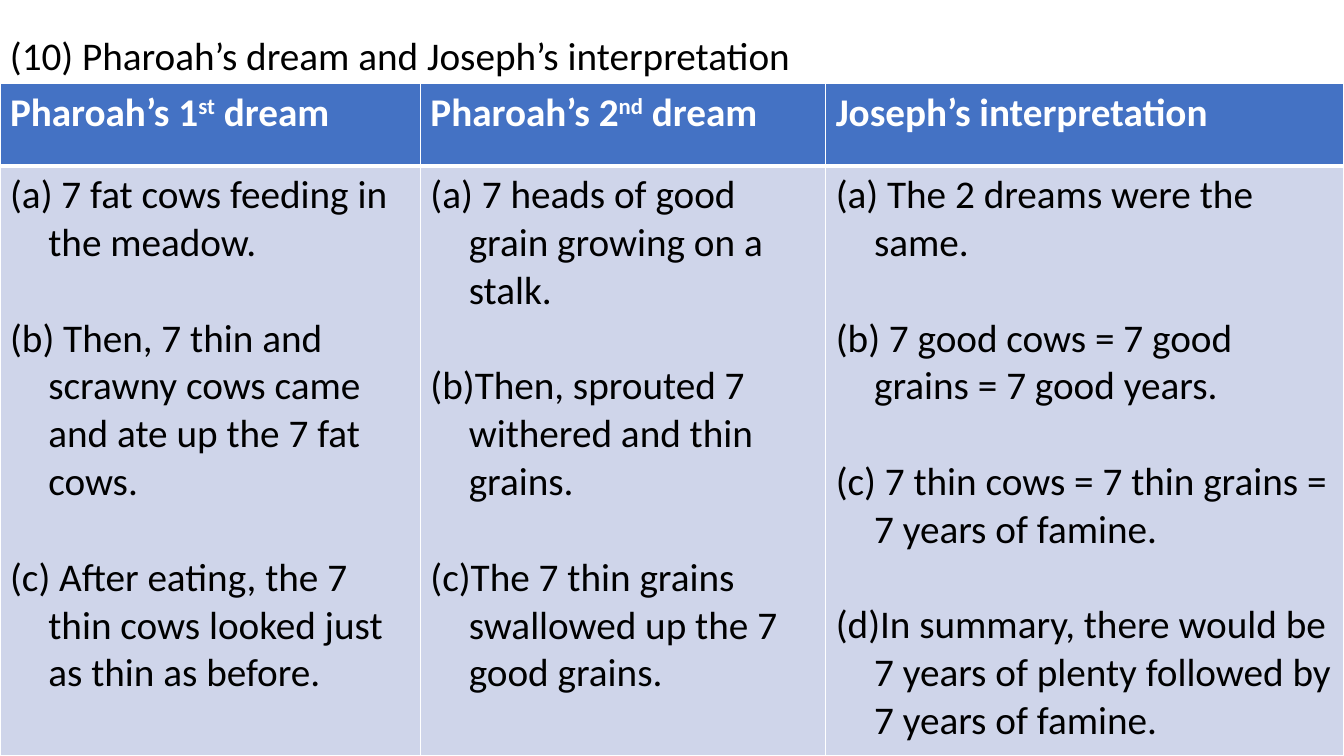
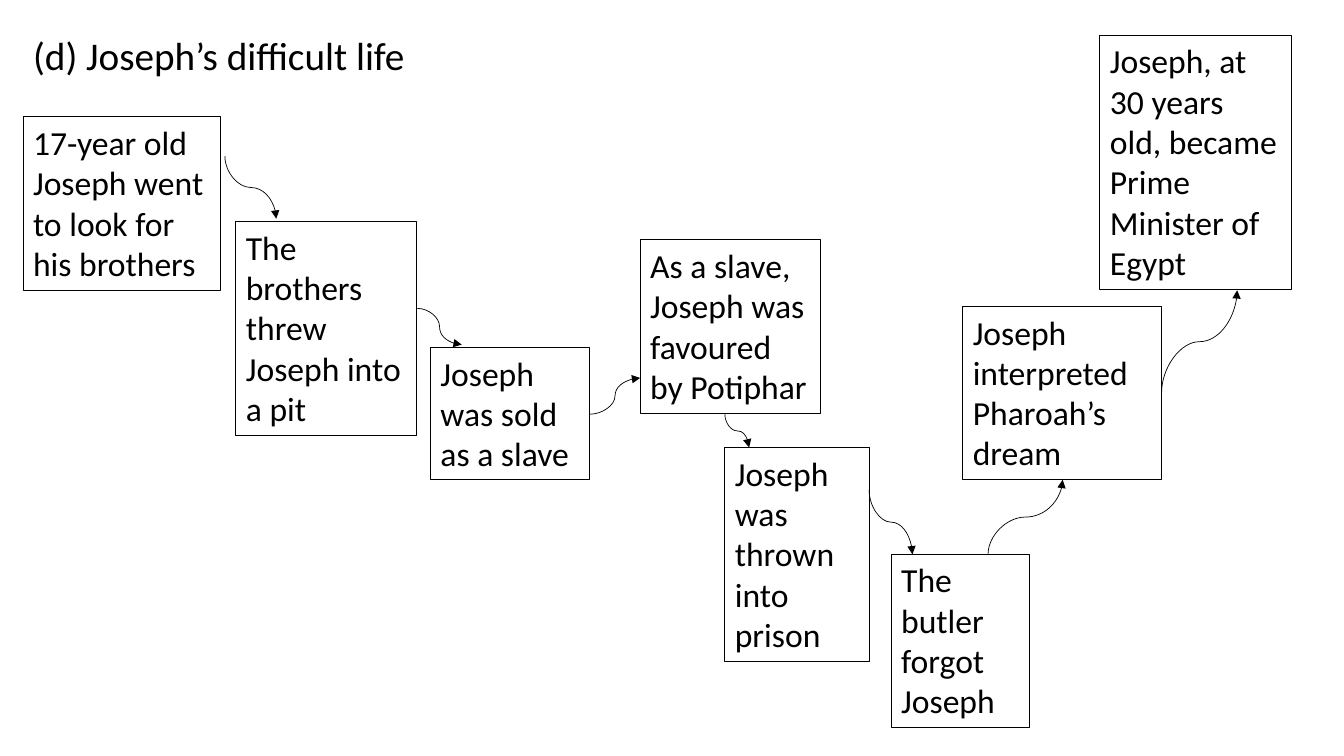
"""Build two slides on Joseph: a table of Pharoah's dreams and a life diagram."""
from lxml import etree
from pptx import Presentation
from pptx.dml.color import RGBColor
from pptx.enum.shapes import MSO_CONNECTOR, MSO_SHAPE
from pptx.enum.text import MSO_ANCHOR, MSO_AUTO_SIZE, PP_ALIGN
from pptx.oxml.ns import qn
from pptx.util import Inches, Pt

RECT, CURVE = MSO_SHAPE.RECTANGLE, MSO_CONNECTOR.CURVE
TOP, LEFT, GROW = MSO_ANCHOR.TOP, PP_ALIGN.LEFT, MSO_AUTO_SIZE.SHAPE_TO_FIT_TEXT

THEME = {
    "font": "Calibri", "ink": "000000", "paper": "FFFFFF",
    "header": "4472C4", "body": "CFD5EA",
    "title": 28, "cell": 28, "box": 24, "item_gap": 34,
    "outline": 0.75, "arrow": 0.5, "grid": 1, "header_rule": 3,
}

DREAM_TITLE = ("(10) Pharoah’s dream and Joseph’s interpretation", (0, 0.26, 13.33, 0.57))
TABLE_AT = (0, 0.83, 13.33, 6.67)
ROW_HEIGHTS = (0.82, 5.85)
COLUMNS = [
    (4.17, ("Pharoah’s 1", "st", " dream"), [
        " 7 fat cows feeding in the meadow.",
        " Then, 7 thin and scrawny cows came and ate up the 7 fat cows.",
        " After eating, the 7 thin cows looked just as thin as before."]),
    (4.02, ("Pharoah’s 2", "nd", " dream"), [
        " 7 heads of good grain growing on a stalk.",
        "Then, sprouted 7 withered and thin grains.",
        "The 7 thin grains swallowed up the 7 good grains."]),
    (5.14, ("Joseph’s interpretation",), [
        " The 2 dreams were the same.",
        " 7 good cows = 7 good grains = 7 good years.",
        " 7 thin cows = 7 thin grains = 7 years of famine.",
        "In summary, there would be 7 years of plenty followed by 7 years of famine."]),
]

LIFE_TITLE = ("(d) Joseph’s difficult life", (0.23, 0.26, 4.34, 0.57))
EVENTS = [
    ("17-year old Joseph went to look for his brothers", (0.23, 1.16, 1.96, 1.72)),
    ("The brothers threw Joseph into a pit", (2.34, 2.2, 1.79, 2.12)),
    ("Joseph was sold as a slave", (4.27, 3.45, 1.58, 1.31)),
    ("As a slave, Joseph was favoured by Potiphar", (6.35, 2.38, 1.79, 1.72)),
    ("Joseph was thrown into prison", (7.19, 4.44, 1.43, 2.12)),
    ("The butler forgot Joseph", (8.84, 5.5, 1.37, 1.72)),
    ("Joseph interpreted Pharoah’s dream", (9.55, 3.04, 1.97, 1.72)),
    ("Joseph, at 30 years old, became Prime Minister of Egypt", (10.91, 0.35, 1.9, 2.52)),
]
ARROWS = [
    ("vertical", (2.23, 1.55), (2.74, 2.17)),
    ("horizontal", (4.14, 3.06), (4.58, 3.42)),
    ("horizontal", (5.85, 4.11), (6.35, 3.75)),
    ("vertical", (7.19, 4.11), (7.43, 4.44)),
    ("vertical", (8.62, 4.86), (9.05, 5.5)),
    ("vertical", (9.8, 5.5), (10.54, 4.76)),
    ("vertical", (11.52, 3.9), (12.27, 2.88)),
]


def rgb(name):
    return RGBColor.from_string(THEME[name])


def inches(values):
    return [Inches(v) for v in values]


def add_run(p, text, size, color="ink", bold=False):
    r = p.add_run()
    r.text = text
    values = {"name": THEME["font"], "size": Pt(THEME[size]), "bold": bold}
    for key, value in values.items():
        setattr(r.font, key, value)
    r.font.color.rgb = rgb(color)
    return r


def fill_frame(sp, text, size):
    tf = sp.text_frame
    values = {"word_wrap": True, "auto_size": GROW, "vertical_anchor": TOP}
    for key, value in values.items():
        setattr(tf, key, value)
    p = tf.paragraphs[0]
    p.alignment = LEFT
    add_run(p, text, size)


def add_title(s, text, at):
    fill_frame(s.shapes.add_textbox(*inches(at)), text, "title")


def add_event(s, text, at):
    sp = s.shapes.add_shape(RECT, *inches(at))
    sp.shadow.inherit = False
    sp.fill.background()
    sp.line.color.rgb = rgb("ink")
    sp.line.width = Pt(THEME["outline"])
    fill_frame(sp, text, "box")


def add_arrow(s, direction, start, end):
    (x1, y1), (x2, y2) = start, end
    turn = 0
    if direction == "vertical":
        cx, cy, dx, dy = (x1 + x2) / 2, (y1 + y2) / 2, x2 - x1, y2 - y1
        side = 1 if dy > 0 else -1
        half_w, half_h = abs(dy) / 2, side * dx / 2
        x1, y1, x2, y2 = cx + half_w, cy - half_h, cx - half_w, cy + half_h
        turn = 270 if dy > 0 else 90
    c = s.shapes.add_connector(CURVE, *inches((x1, y1, x2, y2)))
    c.line.color.rgb = rgb("ink")
    c.line.width = Pt(THEME["arrow"])
    pr = c._element.spPr
    pr.find(qn("a:xfrm")).set("rot", str(turn * 60000))
    etree.SubElement(pr.find(qn("a:ln")), qn("a:tailEnd"), type="triangle")
    etree.SubElement(pr, qn("a:effectLst"))


def style_cell(cell, fill, top, bottom):
    pr = cell._tc.get_or_add_tcPr()
    for side, width in zip("LRTB", ("grid", "grid", top, bottom)):
        ln = etree.SubElement(pr, qn(f"a:ln{side}"), w=str(Pt(THEME[width])))
        solid = etree.SubElement(ln, qn("a:solidFill"))
        etree.SubElement(solid, qn("a:srgbClr"), val=THEME["paper"])
    cell.fill.solid()
    cell.fill.fore_color.rgb = rgb(fill)


def add_item(p, text, first):
    if not first:
        p.space_before = Pt(THEME["item_gap"])
    pr = p._p.get_or_add_pPr()
    indent = Inches(0.38)
    pr.set("marL", str(indent))
    pr.set("indent", str(-indent))
    etree.SubElement(pr, qn("a:buFont"), typeface=THEME["font"])
    etree.SubElement(pr, qn("a:buAutoNum"), type="alphaLcParenBoth")
    add_run(p, text, "cell")


def add_dream_table(s):
    table = s.shapes.add_table(2, len(COLUMNS), *inches(TABLE_AT)).table
    for row, height in zip(table.rows, ROW_HEIGHTS):
        row.height = Inches(height)
    for i, (width, heading, items) in enumerate(COLUMNS):
        table.columns[i].width = Inches(width)
        head, body = table.cell(0, i), table.cell(1, i)
        style_cell(head, "header", "grid", "header_rule")
        style_cell(body, "body", "header_rule", "grid")
        for j, part in enumerate(heading):
            r = add_run(head.text_frame.paragraphs[0], part, "cell", "paper", True)
            if j == 1:
                r._r.get_or_add_rPr().set("baseline", "30000")
        tf = body.text_frame
        for j, item in enumerate(items):
            p = tf.add_paragraph() if j else tf.paragraphs[0]
            add_item(p, item, j == 0)


def main():
    prs = Presentation()
    prs.slide_width, prs.slide_height = inches((13.33, 7.5))
    blank = prs.slide_layouts[6]

    s = prs.slides.add_slide(blank)
    add_title(s, *DREAM_TITLE)
    add_dream_table(s)

    s = prs.slides.add_slide(blank)
    add_title(s, *LIFE_TITLE)
    for event in EVENTS:
        add_event(s, *event)
    for arrow in ARROWS:
        add_arrow(s, *arrow)

    prs.save("out.pptx")


if __name__ == "__main__":
    main()
